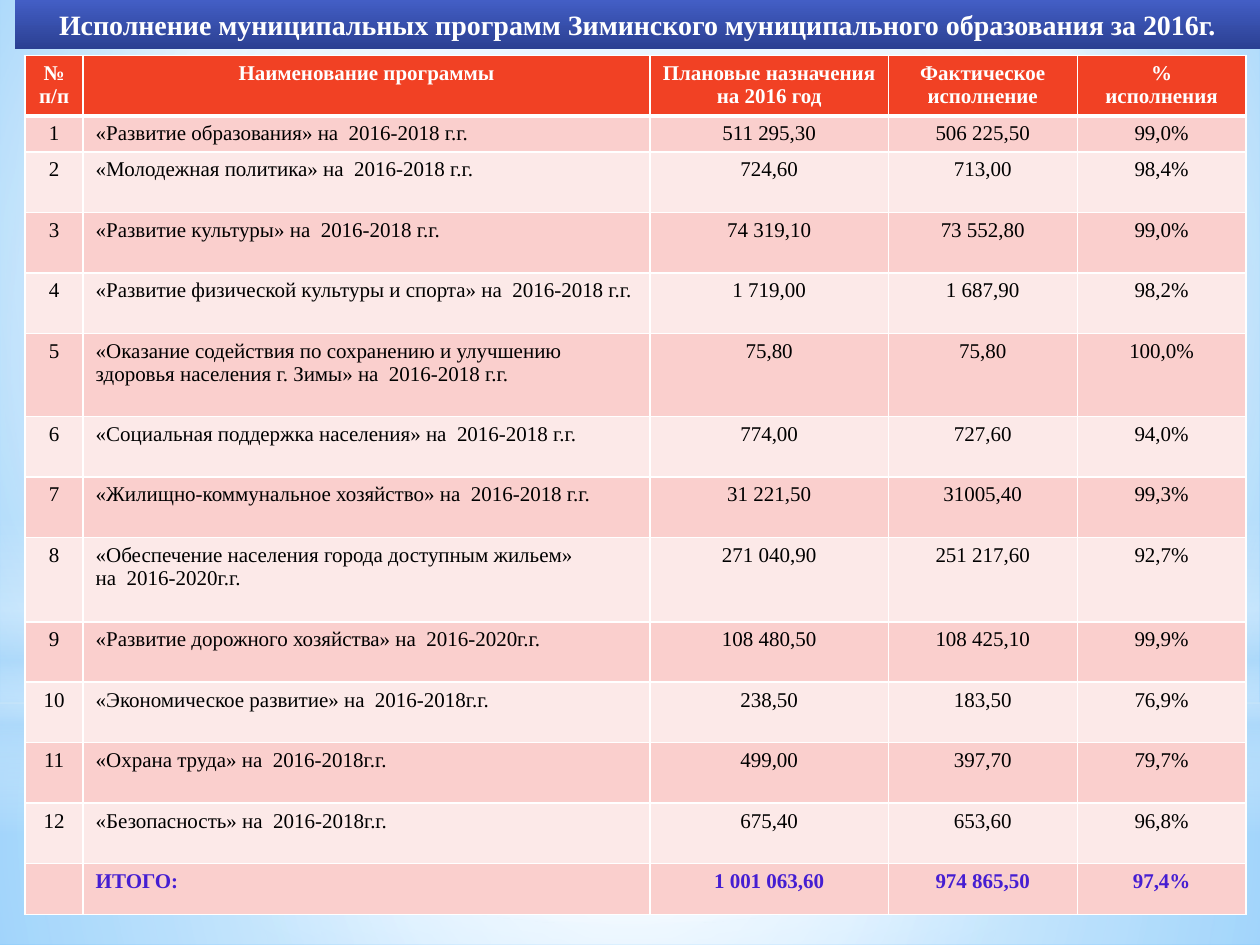
from lxml import etree
from pptx import Presentation
from pptx.dml.color import RGBColor
from pptx.enum.shapes import MSO_SHAPE
from pptx.enum.text import MSO_ANCHOR, PP_ALIGN
from pptx.oxml import parse_xml
from pptx.oxml.ns import nsdecls, qn
from pptx.util import Inches, Pt

CENTER, LEFT = PP_ALIGN.CENTER, PP_ALIGN.LEFT
MIDDLE = MSO_ANCHOR.MIDDLE
RECTANGLE, OVAL = MSO_SHAPE.RECTANGLE, MSO_SHAPE.OVAL

TITLE = "Исполнение муниципальных программ Зиминского муниципального образования за 2016г."
HEADER = ("№\nп/п", "Наименование программы", "Плановые назначения\nна 2016 год",
          "Фактическое исполнение", "%\nисполнения")
PROGRAMS = [
    ("«Развитие образования» на  2016-2018 г.г.", "511 295,30", "506 225,50", "99,0%"),
    ("«Молодежная политика» на  2016-2018 г.г.", "724,60", "713,00", "98,4%"),
    ("«Развитие культуры» на  2016-2018 г.г.", "74 319,10", "73 552,80", "99,0%"),
    ("«Развитие физической культуры и спорта» на  2016-2018 г.г.", "1 719,00", "1 687,90", "98,2%"),
    ("«Оказание содействия по сохранению и улучшению здоровья населения г. Зимы» на  2016-2018 г.г.",
     "75,80", "75,80", "100,0%"),
    ("«Социальная поддержка населения» на  2016-2018 г.г.", "774,00", "727,60", "94,0%"),
    ("«Жилищно-коммунальное хозяйство» на  2016-2018 г.г.", "31 221,50", "31005,40", "99,3%"),
    ("«Обеспечение населения города доступным жильем»\nна  2016-2020г.г.",
     "271 040,90", "251 217,60", "92,7%"),
    ("«Развитие дорожного хозяйства» на  2016-2020г.г.", "108 480,50", "108 425,10", "99,9%"),
    ("«Экономическое развитие» на  2016-2018г.г.", "238,50", "183,50", "76,9%"),
    ("«Охрана труда» на  2016-2018г.г.", "499,00", "397,70", "79,7%"),
    ("«Безопасность» на  2016-2018г.г.", "675,40", "653,60", "96,8%"),
]
TOTAL = ("", "ИТОГО:", "1 001 063,60", "974 865,50", "97,4%")

COLUMN_WIDTHS = (0.46, 4.5, 1.89, 1.5, 1.34)
USUAL_HEIGHT = 0.48
SPECIAL_HEIGHTS = {1: 0.28, 5: 0.66, 8: 0.67, 13: 0.36}
BANDS = ("FCE9E8", "FACFCD")

BACKGROUND = ([(0, "9ED5FF", 100), (60, "FFFFFF", 100), (100, "5BB9FF", 100)], (20, 10, 20, 60))
CENTERED = (50, 50, 50, 50)
GLOWS = [
    (RECTANGLE, (0, 5.58, 10, 1.92),
     [(0, "FFFFFF", 91), (37, "FFFFFF", 76), (100, "B4DCFA", 79)], CENTERED),
    (RECTANGLE, (0, 0, 10, 5.58),
     [(0, "FFFFFF", 89), (48, "FFFFFF", 62), (100, "B4DCFA", 79)], CENTERED),
    (RECTANGLE, (0, 4.12, 10, 2.5),
     [(0, "FFFFFF", 0), (29, "FFFFFF", 30), (45, "B4DCFA", 40), (55, "FFFFFF", 26),
      (65, "B4DCFA", 60), (100, "FFFFFF", 0)], None),
    (OVAL, (0, 1.75, 10, 5.58), [(0, "FFFFFF", 100), (56, "FFFFFF", 0)], CENTERED),
]
TITLE_FILL = [(0, "435EC5", 100), (100, "2B4092", 100)]


def color(value):
    """Turn a hex string into a colour."""
    return RGBColor.from_string(value)


def set_gradient(fill, properties, stops, focus=None):
    """Give the properties element a vertical or, with a focus, a circular gradient."""
    fill.solid()
    gradient = parse_xml(f'<a:gradFill {nsdecls("a")} rotWithShape="1"><a:gsLst/></a:gradFill>')
    for position, value, opacity in stops:
        stop = etree.SubElement(gradient[0], qn("a:gs"), pos=str(position * 1000))
        tone = etree.SubElement(stop, qn("a:srgbClr"), val=value)
        if opacity < 100:
            etree.SubElement(tone, qn("a:alpha"), val=str(opacity * 1000))
    if focus:
        circle = etree.SubElement(gradient, qn("a:path"), path="circle")
        edges = {side: str(share * 1000) for side, share in zip("ltrb", focus)}
        etree.SubElement(circle, qn("a:fillToRect"), **edges)
    else:
        etree.SubElement(gradient, qn("a:lin"), ang="5400000", scaled="0")
    properties.replace(properties.find(qn("a:solidFill")), gradient)


def write(frame, text, align, size, tone, bold):
    """Write each line of the text as a formatted paragraph."""
    frame.text = text
    for paragraph in frame.paragraphs:
        paragraph.alignment = align
        for run in paragraph.runs:
            for name, value in {"name": "Times New Roman", "size": Pt(size), "bold": bold}.items():
                setattr(run.font, name, value)
            run.font.color.rgb = color(tone)


def set_borders(cell, bottom):
    """Draw white borders around a cell."""
    for side, width in {"L": 1, "R": 1, "T": 1, "B": bottom}.items():
        cell._tc.get_or_add_tcPr().append(parse_xml(
            f'<a:ln{side} {nsdecls("a")} w="{Pt(width)}"><a:solidFill>'
            f'<a:srgbClr val="FFFFFF"/></a:solidFill></a:ln{side}>'))


def add_backdrop(slide):
    """Fill the background and lay the soft glows over it."""
    fill = slide.background.fill
    fill.solid()
    set_gradient(fill, slide._element.find(".//" + qn("p:bgPr")), *BACKGROUND)
    for kind, box, stops, focus in GLOWS:
        glow = slide.shapes.add_shape(kind, *map(Inches, box))
        glow.shadow.inherit = False
        glow.line.fill.background()
        set_gradient(glow.fill, glow._element.spPr, stops, focus)


def add_title(slide):
    """Place the title band above the glows."""
    title = slide.shapes.title
    slide.shapes._spTree.append(title._element)
    box = {"left": 0.12, "top": 0, "width": 9.88, "height": 0.39}
    for name, value in box.items():
        setattr(title, name, Inches(value))
    set_gradient(title.fill, title._element.spPr, TITLE_FILL)
    title.text_frame.vertical_anchor = MIDDLE
    write(title.text_frame, TITLE, CENTER, 16, "FFFFFF", True)


def add_programs(slide):
    """Build the table of programs with its header and total."""
    numbered = [(str(number), *program) for number, program in enumerate(PROGRAMS, 1)]
    rows = [HEADER, *numbered, TOTAL]
    heights = [SPECIAL_HEIGHTS.get(index, USUAL_HEIGHT) for index in range(len(rows))]
    table = slide.shapes.add_table(
        len(rows), len(HEADER), Inches(0.2), Inches(0.44),
        Inches(sum(COLUMN_WIDTHS)), Inches(sum(heights))).table
    for column, width in zip(table.columns, COLUMN_WIDTHS):
        column.width = Inches(width)
    for index, (texts, height) in enumerate(zip(rows, heights)):
        table.rows[index].height = Inches(height)
        is_header, is_total = index == 0, texts is TOTAL
        tone = "FFFFFF" if is_header else "451ED2" if is_total else "000000"
        for position, text in enumerate(texts):
            cell = table.cell(index, position)
            set_borders(cell, 3 if is_header else 1)
            cell.fill.solid()
            cell.fill.fore_color.rgb = color("F14124" if is_header else BANDS[index % 2])
            align = LEFT if position == 1 and not is_header else CENTER
            write(cell.text_frame, text, align, 12, tone, is_header or is_total)


def main():
    """Build and save the slide."""
    deck = Presentation()
    deck.slide_width, deck.slide_height = Inches(10), Inches(7.5)
    slide = deck.slides.add_slide(deck.slide_layouts[5])
    add_backdrop(slide)
    add_title(slide)
    add_programs(slide)
    deck.save("out.pptx")


if __name__ == "__main__":
    main()
